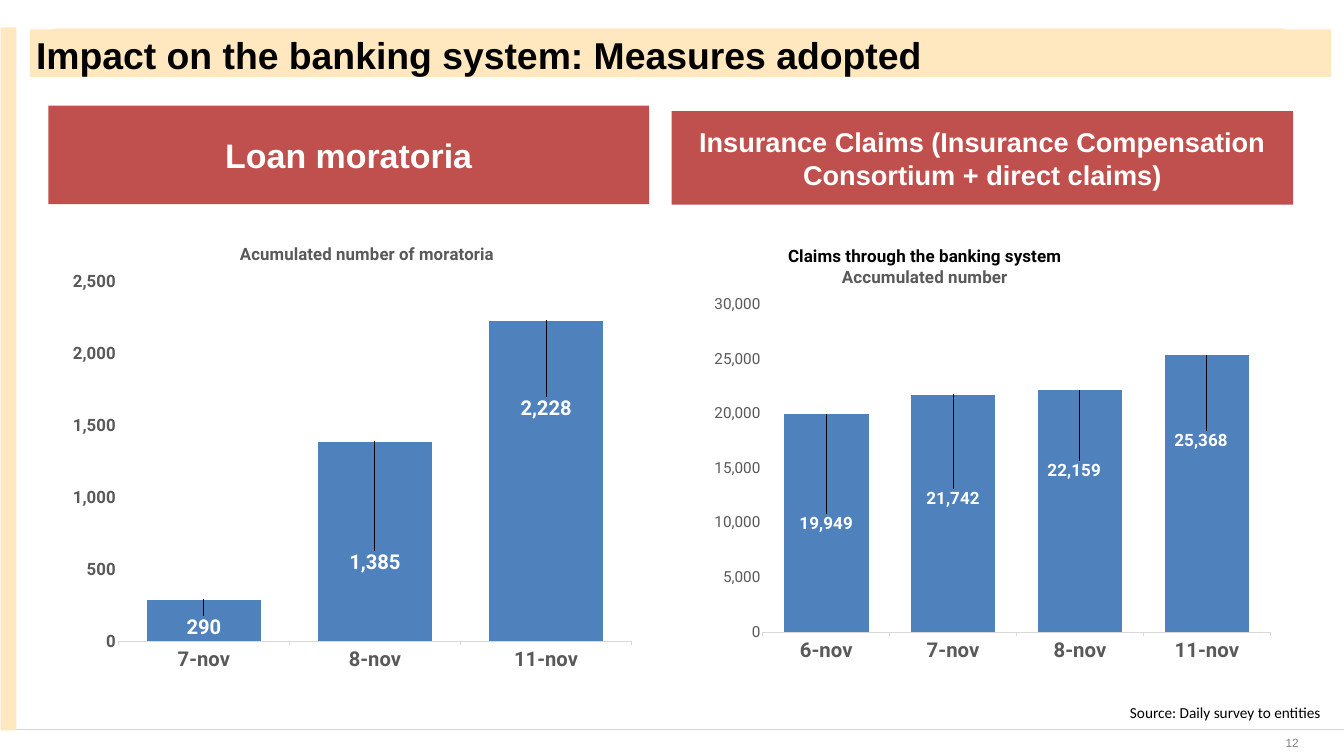
from lxml import etree
from pptx import Presentation
from pptx.chart.data import CategoryChartData
from pptx.dml.color import RGBColor
from pptx.enum.chart import XL_CHART_TYPE, XL_LABEL_POSITION, XL_TICK_MARK
from pptx.enum.shapes import MSO_CONNECTOR, MSO_SHAPE
from pptx.enum.text import MSO_ANCHOR, MSO_AUTO_SIZE, PP_ALIGN
from pptx.oxml.ns import qn
from pptx.util import Emu, Pt

EMU_PER_PX = 9144  # 100 px to the inch
COLOURS = {"cream": "FFE8C0", "red": "C0504D", "blue": "4F81BD", "white": "FFFFFF",
           "black": "000000", "text": "595959", "axis": "D9D9D9", "rule": "D6D6D6",
           "number": "808080"}
LEFT, CENTER, RIGHT = PP_ALIGN.LEFT, PP_ALIGN.CENTER, PP_ALIGN.RIGHT
TOP, MIDDLE = MSO_ANCHOR.TOP, MSO_ANCHOR.MIDDLE
RECT, ROUNDED = MSO_SHAPE.RECTANGLE, MSO_SHAPE.ROUNDED_RECTANGLE
COLUMNS = XL_CHART_TYPE.COLUMN_CLUSTERED
OUTSIDE_END = XL_LABEL_POSITION.OUTSIDE_END
NO_TICK, TICK_OUT = XL_TICK_MARK.NONE, XL_TICK_MARK.OUTSIDE


def px(value):
    return Emu(value * EMU_PER_PX)


def colour(name):
    return RGBColor.from_string(COLOURS[name])


def set_font(font, size, name, shade, bold=False):
    font.size, font.name, font.bold = Pt(size), name, bold
    font.color.rgb = colour(shade)


def set_layout(parent, index, **values):
    """Give a chart part a manual layout, as fractions of the chart."""
    for old in parent.findall(qn("c:layout")):
        parent.remove(old)
    layout = etree.Element(qn("c:layout"))
    manual = etree.SubElement(layout, qn("c:manualLayout"))
    for tag, value in values.items():
        etree.SubElement(manual, qn("c:" + tag)).set("val", str(value))
    parent.insert(index, layout)


class Page:
    def __init__(self, deck):
        self.slide = deck.slides.add_slide(deck.slide_layouts[5])
        self.shapes = self.slide.shapes

    def set_text(self, box, text, size, shade, bold=False, align=LEFT, anchor=TOP, font="Arial"):
        frame = box.text_frame
        frame.word_wrap, frame.auto_size = True, MSO_AUTO_SIZE.NONE
        frame.vertical_anchor = anchor
        frame.text = text
        para = frame.paragraphs[0]
        para.alignment = align
        set_font(para.font, size, font, shade, bold)

    def block(self, bounds, fill, kind=RECT, outline=None):
        box = self.shapes.add_shape(kind, *map(px, bounds))
        box.shadow.inherit = False
        box.fill.solid()
        box.fill.fore_color.rgb = colour(fill)
        if outline:
            box.line.color.rgb = colour(outline)
            box.line.width = Pt(2)
        else:
            box.line.fill.background()
        return box

    def title(self, bounds, text):
        box = self.shapes.title
        box.left, box.top, box.width, box.height = map(px, bounds)
        box.fill.solid()
        box.fill.fore_color.rgb = colour("cream")
        self.set_text(box, text, 44, "black", True)
        box._element.getparent().append(box._element)  # bring to front

    def label(self, bounds, text, size, shade, **style):
        self.set_text(self.shapes.add_textbox(*map(px, bounds)), text, size, shade, **style)

    def heading(self, bounds, text, size):
        self.set_text(self.block(bounds, "red"), text, size, "white", True, CENTER, MIDDLE)

    def rule(self, left, right, y):
        line = self.shapes.add_connector(MSO_CONNECTOR.STRAIGHT, px(left), px(y), px(right), px(y))
        line.line.color.rgb = colour("rule")
        line.line.width = Pt(0.82)
        etree.SubElement(line._element.spPr, qn("a:effectLst"))

    def column_chart(self, bounds, values, title, title_at, plot, step, top, axis_font, label_size,
                     label_shifts):
        data = CategoryChartData(number_format=THOUSANDS)
        data.categories = list(values)
        data.add_series("Series 1", values.values())
        chart = self.shapes.add_chart(COLUMNS, *map(px, bounds), data).chart
        set_font(chart.font, 10, "Calibri", "black")
        chart.has_legend = False
        self.chart_title(chart, title, title_at)
        x, y, w, h = plot
        set_layout(chart._chartSpace.chart.plotArea, 0, layoutTarget="inner", xMode="edge",
                   yMode="edge", x=x, y=y, w=w, h=h)
        self.chart_axes(chart, step, top, axis_font)
        bars = chart.plots[0]
        bars.gap_width, bars.vary_by_categories = 50, False
        series = bars.series[0]
        series.format.fill.solid()
        series.format.fill.fore_color.rgb = colour("blue")
        series.data_labels.number_format = THOUSANDS
        series.data_labels.number_format_is_linked = False
        for index, (dx, dy) in enumerate(label_shifts):
            label = series.points[index].data_label
            set_font(label.font, label_size, "Roboto", "white", True)
            label.position = OUTSIDE_END
            set_layout(series.data_labels._element.findall(qn("c:dLbl"))[index], 1, x=dx, y=dy)

    def chart_title(self, chart, lines, title_at):
        chart.has_title = True
        frame = chart.chart_title.text_frame
        frame.text = "\n".join(text for text, _ in lines)
        for para, (_, shade) in zip(frame.paragraphs, lines):
            set_font(para.font, 20, "Roboto", shade, True)
        x, y = title_at
        set_layout(chart.chart_title._element, 1, xMode="edge", yMode="edge", x=x, y=y)

    def chart_axes(self, chart, step, top, axis_font):
        days, amounts = chart.category_axis, chart.value_axis
        days.major_tick_mark, amounts.major_tick_mark = TICK_OUT, NO_TICK
        days.format.line.color.rgb = colour("axis")
        days.format.line.width = Pt(0.75)
        set_font(days.tick_labels.font, 24, "Roboto", "text", True)
        amounts.has_major_gridlines = False
        amounts.minimum_scale, amounts.maximum_scale = 0, top
        amounts.major_unit = step
        amounts.format.line.fill.background()
        amounts.tick_labels.number_format = THOUSANDS
        amounts.tick_labels.number_format_is_linked = False
        size, bold = axis_font
        set_font(amounts.tick_labels.font, size, "Roboto", "text", bold)


THOUSANDS = "#,##0"


def main():
    deck = Presentation()
    deck.slide_width, deck.slide_height = px(2199), px(1237)
    page = Page(deck)

    page.rule(26, 2199, 1194)
    page.block((1, 45, 26, 1150), "cream")
    page.label((2049, 1198, 86, 34), "12", 14, "number", align=RIGHT)
    page.block((79, 45, 2032, 79), "cream", ROUNDED, "white")
    page.title((49, 48, 2129, 78), "Impact on the banking system: Measures adopted")
    page.label((1839, 1145, 340, 40), "Source: Daily survey to entities", 18, "black",
               font="Calibri")

    page.heading((79, 173, 983, 161), "Loan moratoria", 40)
    page.heading((1099, 182, 1017, 153),
                 "Insurance Claims (Insurance Compensation Consortium + direct claims)", 32)

    page.column_chart(
        (119, 361, 933, 765), {"7-nov": 290, "8-nov": 1385, "11-nov": 2228},
        [("Acumulated number of moratoria", "text")], (0.28, 0.04),
        (0.07, 0.13, 0.91, 0.77), 500, 2500, (20, True), 24,
        [(0, 0.09), (0, 0.29), (0, 0.22)])
    page.column_chart(
        (1124, 361, 955, 765),
        {"6-nov": 19949, "7-nov": 21742, "8-nov": 22159, "11-nov": 25368},
        [("Claims through the banking system", "black"), ("Accumulated number", "text")],
        (0.17, 0.05), (0.13, 0.18, 0.87, 0.7), 5000, 30000, (18, False), 20,
        [(0, 0.26), (0, 0.25), (-0.01, 0.2), (-0.01, 0.21)])

    deck.save("out.pptx")


if __name__ == "__main__":
    main()
